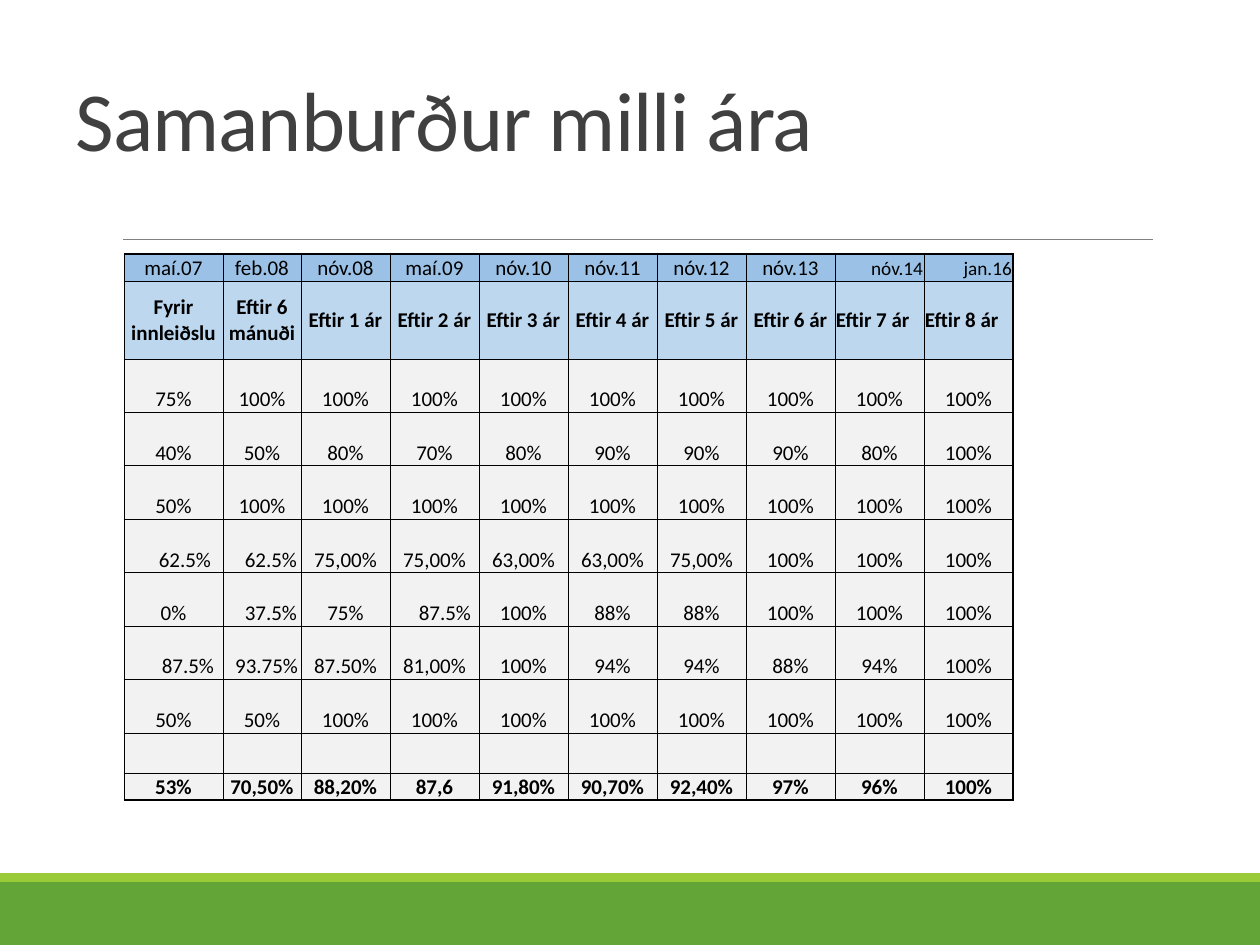
from pptx import Presentation
from pptx.dml.color import RGBColor
from pptx.enum.shapes import MSO_CONNECTOR as Conn, MSO_SHAPE as Shape
from pptx.enum.text import MSO_ANCHOR as Anchor, PP_ALIGN as Align
from pptx.oxml import parse_xml
from pptx.oxml.ns import nsdecls
from pptx.util import Emu, Pt


class Theme:
    font = "Calibri"
    ink, title, rule = "000000", "404040", "808080"
    green, lime = "63A537", "99CB38"
    dates, years, body = "9BC2E6", "BDD7EE", "F2F2F2"
    big, mid, small = 48, 12, 11


def px(n):
    return Emu(round(n * 914400 / 126))


def write(frame, text, size=Theme.mid, color=Theme.ink, bold=False,
          align=Align.CENTER, lead=None, track=0):
    """Put one formatted paragraph in a frame; track is in 1/100 pt."""
    para = frame.paragraphs[0]
    para.alignment = align
    if lead:
        para.line_spacing = lead
    run = para.add_run()
    run.text = text
    font = run.font
    font.name, font.size, font.bold = Theme.font, Pt(size), bold
    font.color.rgb = RGBColor.from_string(color)
    if track:
        run._r.get_or_add_rPr().set("spc", str(track))


deck = Presentation()
deck.slide_width, deck.slide_height = px(1260), px(945)
slide = deck.slides.add_slide(deck.slide_layouts[6])
shapes = slide.shapes

# Footer bands
for top, high, color in ((882, 63, Theme.green), (873, 9, Theme.lime)):
    band = shapes.add_shape(Shape.RECTANGLE, 0, px(top), px(1260), px(high))
    band.shadow.inherit = False
    band.fill.solid()
    band.fill.fore_color.rgb = RGBColor.from_string(color)
    band.line.fill.background()

# Rule under the title
rule = shapes.add_connector(Conn.STRAIGHT, px(123), px(239), px(1153), px(239))
rule.line.color.rgb = RGBColor.from_string(Theme.rule)
rule.line.width = Pt(0.5)
rule._element.spPr.append(parse_xml(f"<a:effectLst {nsdecls('a')}/>"))

# Title
box = shapes.add_textbox(px(63), px(38), px(1134), px(137))
box.text_frame.word_wrap = True
box.text_frame.vertical_anchor = Anchor.BOTTOM
write(box.text_frame, "Samanburður milli ára", size=Theme.big,
      color=Theme.title, align=Align.LEFT, lead=0.85, track=-50)

# Comparison table
full = ["100%"] * 10
rows = [
    ["maí.07", "feb.08", "nóv.08", "maí.09", "nóv.10",
     "nóv.11", "nóv.12", "nóv.13", "nóv.14", "jan.16"],
    ["Fyrir innleiðslu", "Eftir 6 mánuði"] + [f"Eftir {n} ár" for n in range(1, 9)],
    ["75%"] + full[1:],
    ["40%", "50%", "80%", "70%", "80%", "90%", "90%", "90%", "80%", "100%"],
    ["50%"] + full[1:],
    ["62.5%", "62.5%", "75,00%", "75,00%", "63,00%", "63,00%", "75,00%"] + full[7:],
    ["0%", "37.5%", "75%", "87.5%", "100%", "88%", "88%"] + full[7:],
    ["87.5%", "93.75%", "87.50%", "81,00%", "100%", "94%", "94%", "88%", "94%", "100%"],
    ["50%", "50%"] + full[2:],
    [""] * 10,
    ["53%", "70,50%", "88,20%", "87,6", "91,80%", "90,70%", "92,40%", "97%", "96%", "100%"],
]
wide = [99, 78] + [89] * 8
high = [27, 78] + [374 / 7] * 7 + [40, 27]
# Right-aligned cells, with their right inset
right = {(0, 8): 1, (0, 9): 1, (5, 0): 12, (5, 1): 4,
         (6, 1): 4, (6, 3): 8, (7, 0): 9, (7, 1): 3}
last = len(rows) - 1

grid = shapes.add_table(len(rows), len(wide), px(124), px(254),
                        px(sum(wide)), px(sum(high))).table
grid.first_row = grid.horz_banding = False
for col, w in zip(grid.columns, wide):
    col.width = px(w)
for row, h in zip(grid.rows, high):
    row.height = px(h)

for r, words in enumerate(rows):
    for c, word in enumerate(words):
        cell = grid.cell(r, c)
        cell.margin_left = cell.margin_top = px(1)
        cell.margin_right, cell.margin_bottom = px(right.get((r, c), 1)), 0
        cell.vertical_anchor = Anchor.MIDDLE if r == 1 else Anchor.BOTTOM

        thick = {"L": False, "R": c == 9, "T": r == 0, "B": r == last}
        for side, heavy in thick.items():
            cell._tc.get_or_add_tcPr().append(parse_xml(
                f'<a:ln{side} {nsdecls("a")} w="{Pt(1 if heavy else 0.5)}">'
                f'<a:solidFill><a:srgbClr val="{Theme.ink}"/></a:solidFill>'
                f'</a:ln{side}>'))

        cell.fill.solid()
        color = {0: Theme.dates, 1: Theme.years}.get(r, Theme.body)
        cell.fill.fore_color.rgb = RGBColor.from_string(color)

        if (r, c) in right:
            align = Align.RIGHT
        else:
            align = Align.LEFT if r == 1 and c > 7 else Align.CENTER
        if word:
            write(cell.text_frame, word, align=align, bold=r in (1, last),
                  size=Theme.small if r == 0 and c > 7 else Theme.mid)

deck.save("out.pptx")
